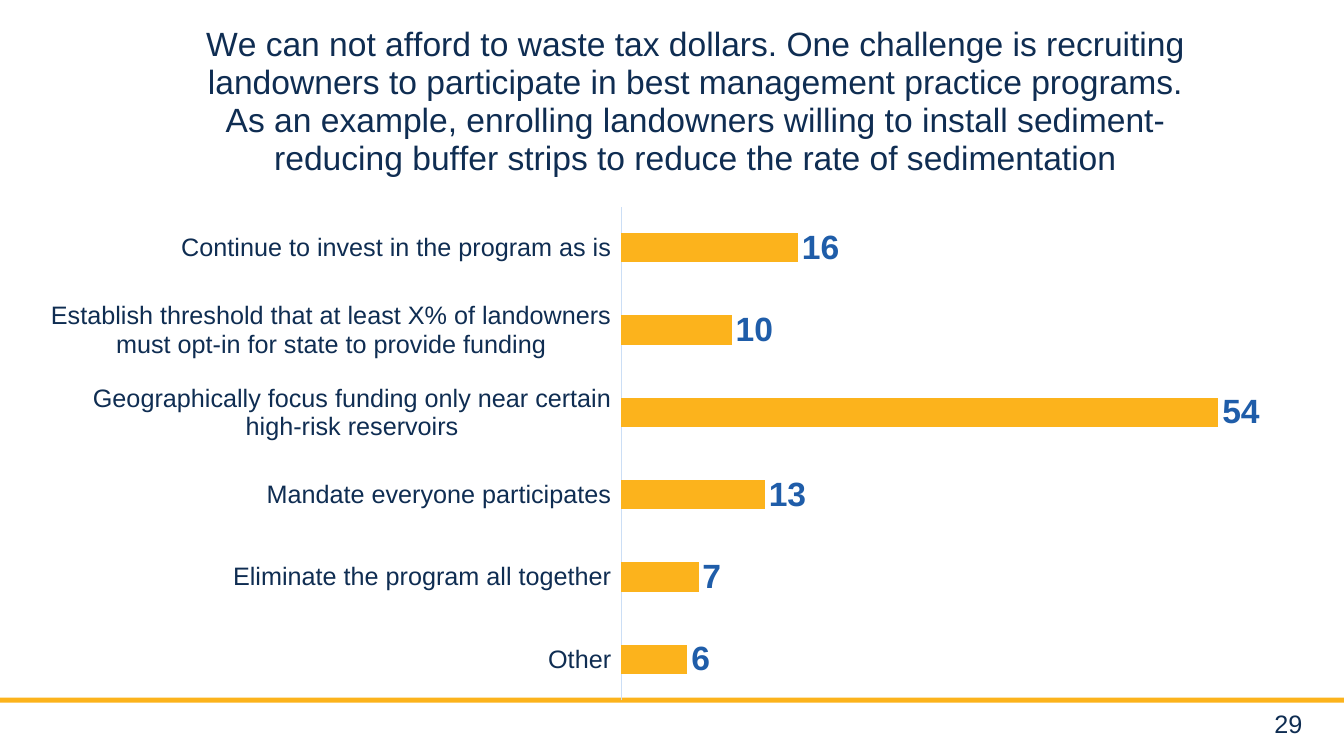
from lxml import etree
from pptx import Presentation
from pptx.chart.data import CategoryChartData
from pptx.dml.color import RGBColor
from pptx.enum.chart import XL_CHART_TYPE, XL_LABEL_POSITION, XL_TICK_LABEL_POSITION, XL_TICK_MARK
from pptx.enum.shapes import MSO_SHAPE
from pptx.enum.text import MSO_ANCHOR, PP_ALIGN
from pptx.oxml.ns import qn
from pptx.util import Cm, Pt

NAVY, BLUE, GOLD, PALE = "0F2D52", "1F5DA9", "FCB31C", "CBDEF5"


def style(font, size, color, bold=False):
    font.name, font.size, font.bold = "Arial", Pt(size), bold
    font.color.rgb = RGBColor.from_string(color)


def place(element, index, **settings):
    """Give a chart part a manual layout, in fractions of the chart."""
    for old in element.findall(qn("c:layout")):
        element.remove(old)
    layout = etree.Element(qn("c:layout"))
    manual = etree.SubElement(layout, qn("c:manualLayout"))
    for tag, value in settings.items():
        etree.SubElement(manual, qn(f"c:{tag}")).set("val", str(value))
    element.insert(index, layout)


presentation = Presentation()
presentation.slide_width, presentation.slide_height = Cm(33.87), Cm(19.05)
slide = presentation.slides.add_slide(presentation.slide_layouts[6])

# Footer rule and page number
footer_rule = slide.shapes.add_shape(
    MSO_SHAPE.RECTANGLE, Cm(0), Cm(17.58), presentation.slide_width, Cm(0.13))
footer_rule.shadow.inherit = False
footer_rule.fill.solid()
footer_rule.fill.fore_color.rgb = RGBColor.from_string(GOLD)
footer_rule.line.fill.background()

page_number = slide.shapes.add_textbox(Cm(30.68), Cm(17.78), Cm(2.39), Cm(0.89)).text_frame
page_number.word_wrap = True
page_number.vertical_anchor = MSO_ANCHOR.MIDDLE
page_number.text = "29"
page_number.paragraphs[0].alignment = PP_ALIGN.RIGHT
style(page_number.paragraphs[0].font, 18, NAVY)

# Poll results
responses = {
    "Continue to invest in the program as is": 16,
    "Establish threshold that at least X% of landowners\nmust opt-in for state to provide funding": 10,
    "Geographically focus funding only near certain\nhigh-risk reservoirs": 54,
    "Mandate everyone participates": 13,
    "Eliminate the program all together": 7,
    "Other": 6,
}
poll = CategoryChartData()
poll.categories = list(responses)
poll.add_series("Series 1", list(responses.values()))
chart = slide.shapes.add_chart(
    XL_CHART_TYPE.BAR_CLUSTERED, Cm(0.86), Cm(0.23), Cm(32.16), Cm(17.78), poll).chart
style(chart.font, 10, NAVY)
chart.has_legend = False

# Question
chart.has_title = True
question = chart.chart_title.text_frame
question.text = (
    "We can not afford to waste tax dollars. One challenge is recruiting landowners "
    "to participate in best management practice programs. As an example, enrolling "
    "landowners willing to install sediment-reducing buffer strips to reduce the "
    "rate of sedimentation")
style(question.paragraphs[0].font, 24, NAVY)
chart.chart_title.include_in_layout = False
place(chart.chart_title._element, 1, xMode="edge", yMode="edge", x=0.13, y=0.01)

# Axes
answers = chart.category_axis
answers.reverse_order = True
answers.major_tick_mark = answers.minor_tick_mark = XL_TICK_MARK.NONE
answers.tick_label_position = XL_TICK_LABEL_POSITION.LOW
answers.format.line.color.rgb = RGBColor.from_string(PALE)
answers.format.line.width = Pt(0.75)
style(answers.tick_labels.font, 18, NAVY)
votes = chart.value_axis
votes.minimum_scale, votes.maximum_scale = 0, 60
votes.has_major_gridlines = False
votes.visible = False

# Bars and their values
bars = chart.plots[0]
bars.gap_width = 182
bars.vary_by_categories = False
bars.series[0].format.fill.solid()
bars.series[0].format.fill.fore_color.rgb = RGBColor.from_string(GOLD)
bars.has_data_labels = True
bars.data_labels.show_value = True
bars.data_labels.position = XL_LABEL_POSITION.OUTSIDE_END
style(bars.data_labels.font, 24, BLUE, bold=True)
plot_area = chart._chartSpace.find(f".//{qn('c:plotArea')}")
place(plot_area, 0, layoutTarget="inner", xMode="edge", yMode="edge",
      x=0.46, y=0.28, w=0.52, h=0.7)

presentation.save("out.pptx")
